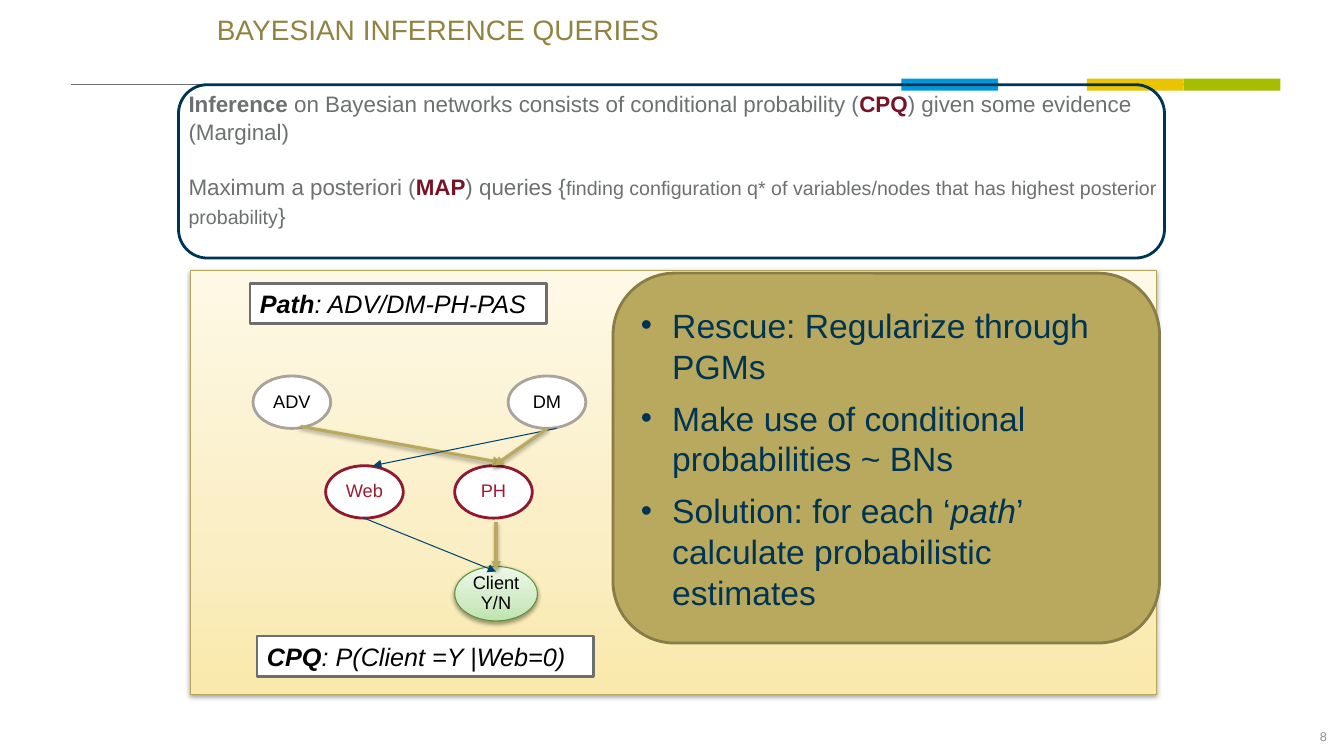
import copy
from dataclasses import dataclass

import pptx
import pptx.dml.color
import pptx.enum.dml
import pptx.enum.shapes
import pptx.enum.text
import pptx.oxml
import pptx.oxml.ns
import pptx.util
from pptx.util import Inches

COLORS = {
    "white": "FFFFFF", "black": "000000", "title": "918340", "gray": "6D7071",
    "rule": "6C6F70", "page": "8C8C8C", "green": "A6BE00", "yellow": "EBC300",
    "blue": "0098DB", "accent": "761427", "node gray": "A9A39B", "node red": "8F192F",
    "red": "9E1B34", "node green": "5D9136", "panel edge": "B6A75A", "gold": "B8A95E",
    "gold edge": "887D46", "navy": "003455", "arrow blue": "004470",
}
CREAM = ((0, "FAE9AA"), (0.35, "FAEEC4"), (1, "FEF9E7"))
MINT = ((0, "BEE4AD"), (0.35, "D1EBC6"), (1, "EDF8E9"))
SHAPES = pptx.enum.shapes.MSO_SHAPE
ALIGN = pptx.enum.text.PP_ALIGN
ANCHOR = pptx.enum.text.MSO_ANCHOR


@dataclass
class Node:
    label: str
    left: float
    top: float
    border: str
    text: str
    width: float = 0.77
    height: float = 0.52
    line_width: float = 2
    gradient: tuple = ()


@dataclass
class Arrow:
    start: tuple
    end: tuple
    color: str = "arrow blue"
    width: float = 0.75
    shadow: bool = False


@dataclass
class Caption:
    term: str
    rest: str
    left: float
    top: float
    width: float


NODES = [
    Node("ADV", 2.51, 3.73, "node gray", "black"),
    Node("DM", 5.04, 3.73, "node gray", "black"),
    Node("PH", 4.51, 4.62, "node red", "red"),
    Node("Web", 3.23, 4.62, "node red", "red"),
    Node("Client Y/N", 4.51, 5.62, "node green", "black", 0.82, 0.54, 0.75, MINT),
]
ARROWS = [
    Arrow((2.98, 4.23), (4.98, 4.59), "gold", 2.25, True),
    Arrow((3.61, 5.14), (4.92, 5.67)),
    Arrow((5.52, 4.25), (3.7, 4.62)),
    Arrow((5.43, 4.25), (4.9, 4.62), "gold", 2.25, True),
    Arrow((4.92, 5.18), (4.92, 5.66), "gold", 2.25, True),
]
CAPTIONS = [
    Caption("Path", ": ADV/DM-PH-PAS", 2.48, 2.81, 2.94),
    Caption("CPQ", ": P(Client =Y |Web=0)", 2.55, 6.31, 3.34),
]
BARS = [("green", 11.74), ("yellow", 10.78), ("blue", 8.94)]
QUERIES = [
    [("Inference", dict(bold=True)),
     (" on Bayesian networks consists of conditional probability (", {}),
     ("CPQ", dict(bold=True, color="accent")),
     (") given some evidence (Marginal)", {})],
    [("Maximum a posteriori (", {}),
     ("MAP", dict(bold=True, color="accent")),
     (") queries {", {}),
     ("finding configuration q* of variables/nodes that has highest posterior probability",
      dict(size=14)),
     ("}", {})],
]
RESCUE = [
    [("Rescue: Regularize through PGMs", False)],
    [("Make use of conditional probabilities ~ BNs", False)],
    [("Solution: for each ‘", False), ("path", True),
     ("’ calculate probabilistic estimates", False)],
]


def rgb(name: str) -> pptx.dml.color.RGBColor:
    return pptx.dml.color.RGBColor.from_string(COLORS[name])


def add_run(paragraph, text: str, *, size: float = 16, color: str = "gray",
            bold: bool = False, italic: bool = False) -> None:
    run = paragraph.add_run()
    run.text = text
    run.font.name = "Arial"
    run.font.size = pptx.util.Pt(size)
    run.font.bold = bold
    run.font.italic = italic
    run.font.color.rgb = rgb(color)


def add_xml(parent, tag: str, body: str = "", attributes: str = "") -> None:
    namespace = pptx.oxml.ns.nsdecls("a")
    parent.append(pptx.oxml.parse_xml(f"<a:{tag} {namespace} {attributes}>{body}</a:{tag}>"))


def add_shadow(effects, opacity: int) -> None:
    add_xml(effects, "outerShdw",
            f'<a:srgbClr val="{COLORS["black"]}"><a:alpha val="{opacity * 1000}"/></a:srgbClr>',
            'blurRad="39370" dist="21590" dir="5400000" rotWithShape="0"')


def add_box(slide, kind, left: float, top: float, width: float, height: float, *,
            fill: str = "", gradient: tuple = (), line: str = "", line_width: float = 2):
    """Add a preset shape; a gradient runs from bottom to top and brings a shadow."""
    shape = slide.shapes.add_shape(kind, Inches(left), Inches(top), Inches(width), Inches(height))
    shape.shadow.inherit = False
    properties = shape._element.spPr
    if gradient:
        shape.fill.gradient()
        shape.fill.gradient_angle = 90
        stops = properties.find(".//" + pptx.oxml.ns.qn("a:gsLst"))
        stops.append(copy.deepcopy(stops[0]))
        for stop, (position, color) in zip(shape.fill.gradient_stops, gradient):
            stop.position = position
            stop.color.rgb = pptx.dml.color.RGBColor.from_string(color)
        add_shadow(properties.find(pptx.oxml.ns.qn("a:effectLst")), 38)
    elif fill:
        shape.fill.solid()
        shape.fill.fore_color.rgb = rgb(fill)
    else:
        shape.fill.background()
    if line:
        shape.line.color.rgb = rgb(line)
        shape.line.width = pptx.util.Pt(line_width)
    else:
        shape.line.fill.background()
    return shape


def set_frame(frame, anchor, margin: float = 0) -> None:
    frame.word_wrap = True
    frame.auto_size = pptx.enum.text.MSO_AUTO_SIZE.NONE
    frame.vertical_anchor = anchor
    frame.margin_left = frame.margin_right = Inches(margin)
    frame.margin_top = frame.margin_bottom = Inches(margin / 2)


def add_text_box(slide, left: float, top: float, width: float, height: float, anchor):
    box = slide.shapes.add_textbox(Inches(left), Inches(top), Inches(width), Inches(height))
    set_frame(box.text_frame, anchor)
    return box.text_frame


def paragraphs_for(frame, items: list):
    """Yield a paragraph of the frame with each item."""
    for index, item in enumerate(items):
        yield (frame.add_paragraph() if index else frame.paragraphs[0]), item


def add_line(slide, line: Arrow, head: bool = True) -> None:
    connector = slide.shapes.add_connector(
        pptx.enum.shapes.MSO_CONNECTOR.STRAIGHT,
        *(Inches(value) for value in (*line.start, *line.end)))
    connector.line.color.rgb = rgb(line.color)
    connector.line.width = pptx.util.Pt(line.width)
    if head:
        add_xml(connector.line._get_or_add_ln(), "tailEnd", attributes='type="triangle"')
    properties = connector._element.spPr
    add_xml(properties, "effectLst")
    if line.shadow:
        add_shadow(properties[-1], 35)


def add_node(slide, node: Node) -> None:
    oval = add_box(slide, SHAPES.OVAL, node.left, node.top, node.width, node.height, fill="white",
                   gradient=node.gradient, line=node.border, line_width=node.line_width)
    set_frame(oval.text_frame, ANCHOR.MIDDLE)
    paragraph = oval.text_frame.paragraphs[0]
    paragraph.alignment = ALIGN.CENTER
    paragraph.line_spacing = 0.9
    add_run(paragraph, node.label, size=13, color=node.text)


def add_caption(slide, caption: Caption) -> None:
    box = add_box(slide, SHAPES.RECTANGLE, caption.left, caption.top, caption.width, 0.4,
                  fill="white", line="rule")
    set_frame(box.text_frame, ANCHOR.TOP, 0.1)
    paragraph = box.text_frame.paragraphs[0]
    paragraph.alignment = ALIGN.LEFT
    add_run(paragraph, caption.term, size=18, color="black", bold=True, italic=True)
    add_run(paragraph, caption.rest, size=18, color="black", italic=True)


def add_rescue_panel(slide) -> None:
    panel = add_box(slide, SHAPES.FLOWCHART_ALTERNATE_PROCESS, 6.08, 2.71, 5.42, 3.67,
                    fill="gold", line="gold edge")
    set_frame(panel.text_frame, ANCHOR.MIDDLE, 0.1)
    for paragraph, runs in paragraphs_for(panel.text_frame, RESCUE):
        paragraph.alignment = ALIGN.LEFT
        paragraph.line_spacing = 1.01
        paragraph.space_before = pptx.util.Pt(7.1)
        paragraph.space_after = pptx.util.Pt(0.9)
        properties = paragraph._p.get_or_add_pPr()
        properties.set("marL", str(Inches(0.31)))
        properties.set("indent", str(-Inches(0.31)))
        add_xml(properties, "buSzPct", attributes='val="95000"')
        add_xml(properties, "buFont", attributes='typeface="Arial"')
        add_xml(properties, "buChar", attributes='char="•"')
        for text, italic in runs:
            add_run(paragraph, text, size=24, color="navy", italic=italic)


def main() -> None:
    presentation = pptx.Presentation()
    presentation.slide_width, presentation.slide_height = Inches(13.33), Inches(7.5)
    slide = presentation.slides.add_slide(presentation.slide_layouts[5])

    title = slide.shapes.title
    title.left, title.top, title.width, title.height = map(Inches, (2.15, 0.14, 9.05, 0.7))
    set_frame(title.text_frame, ANCHOR.TOP)
    heading = title.text_frame.paragraphs[0]
    heading.alignment = ALIGN.LEFT
    heading.line_spacing = 0.97
    add_run(heading, "BAYESIAN INFERENCE QUERIES", size=20, color="title")

    page = add_text_box(slide, 10.16, 7.16, 3, 0.3, ANCHOR.MIDDLE).paragraphs[0]
    page.alignment = ALIGN.RIGHT
    add_run(page, "8", size=9, color="page")

    add_line(slide, Arrow((0.7, 0.84), (12.67, 0.84), "rule", 1), head=False)
    for color, left in BARS:
        add_box(slide, SHAPES.RECTANGLE, left, 0.78, 0.96, 0.12, fill=color)
    add_box(slide, SHAPES.RECTANGLE, 1.89, 2.68, 9.58, 4.21, gradient=CREAM,
            line="panel edge", line_width=0.75)

    queries = add_text_box(slide, 1.87, 0.88, 9.68, 1.6, ANCHOR.TOP)
    for paragraph, runs in paragraphs_for(queries, QUERIES):
        paragraph.line_spacing = 1.05
        paragraph.space_before = pptx.util.Pt(19.4)
        for text, style in runs:
            add_run(paragraph, text, **style)

    for node in NODES:
        add_node(slide, node)
    for arrow in ARROWS:
        add_line(slide, arrow)
    for caption in CAPTIONS:
        add_caption(slide, caption)
    add_box(slide, SHAPES.FLOWCHART_ALTERNATE_PROCESS, 1.77, 0.84, 9.78, 1.72, line="navy")
    add_rescue_panel(slide)
    presentation.save("out.pptx")


if __name__ == "__main__":
    main()
